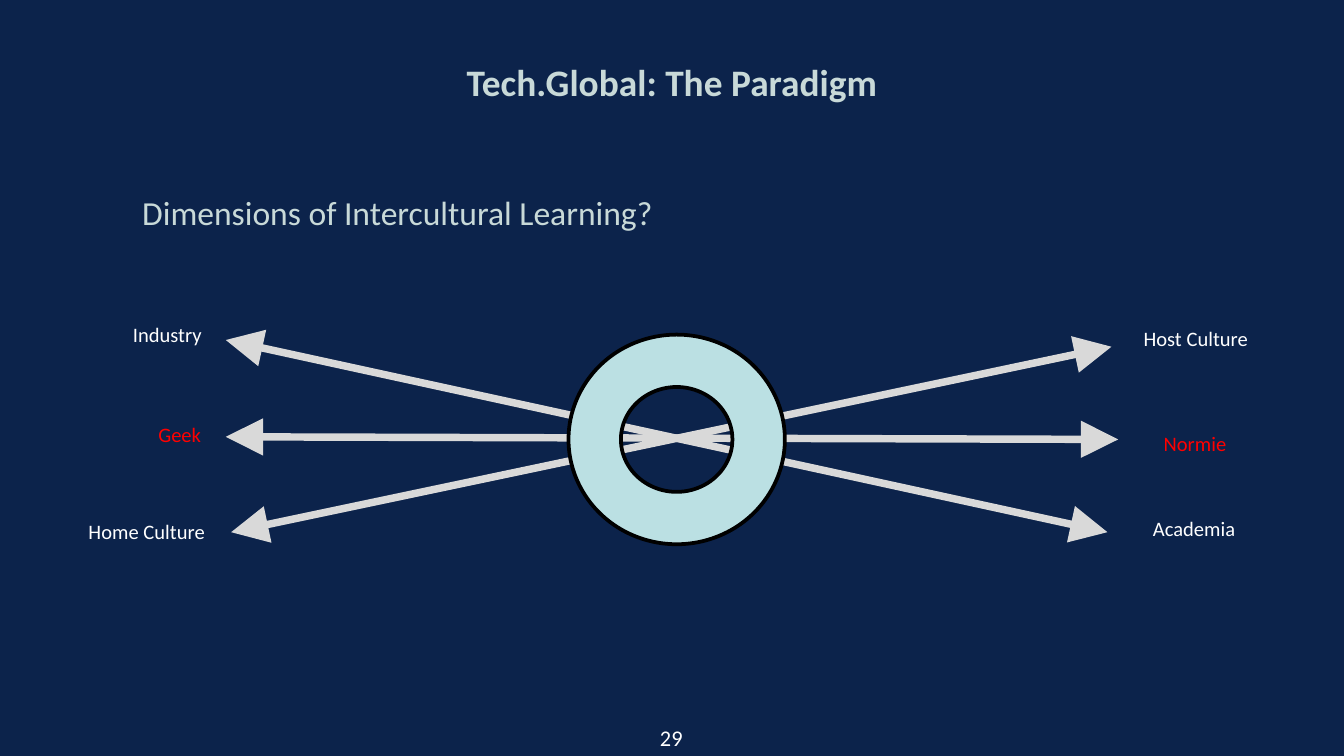
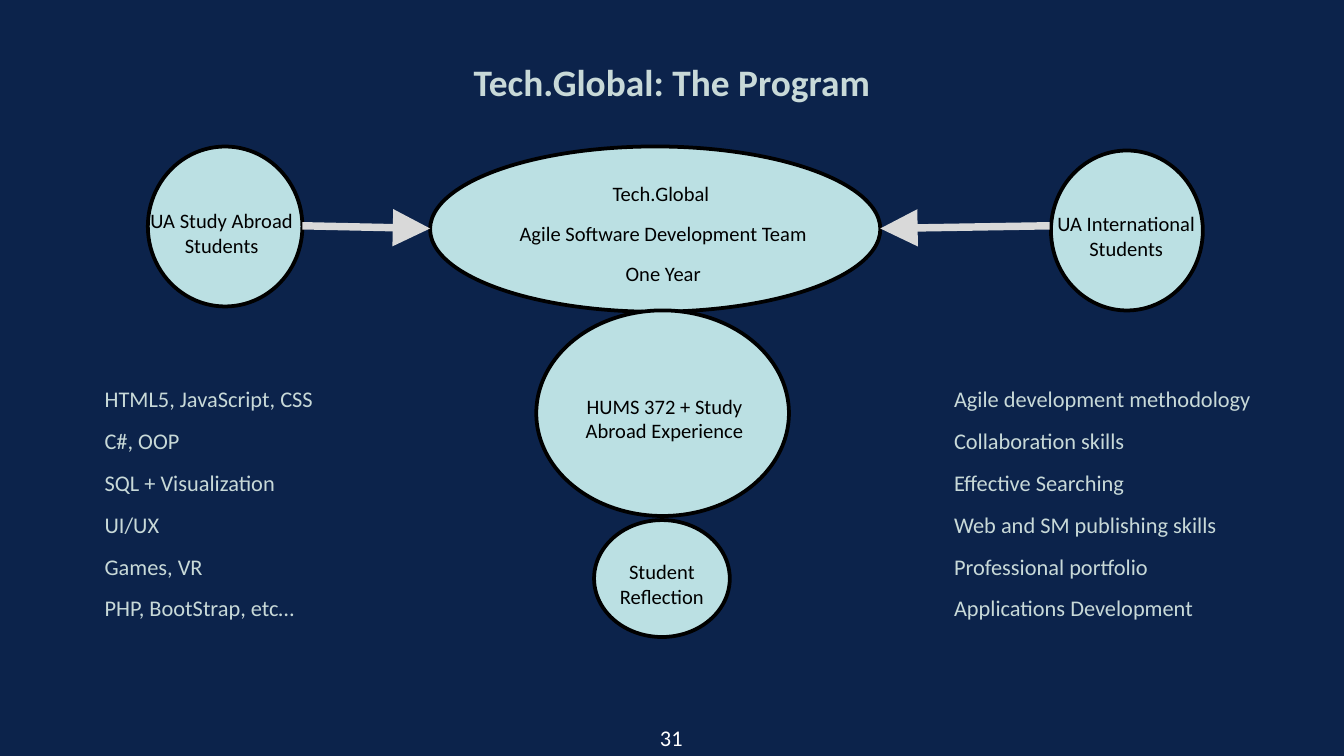
from dataclasses import dataclass

from lxml.etree import SubElement as Sub
from pptx import Presentation
from pptx.dml.color import RGBColor as Rgb
from pptx.enum.shapes import MSO_CONNECTOR as Link, MSO_SHAPE as Kind
from pptx.enum.text import MSO_ANCHOR as Anchor, PP_ALIGN as Align
from pptx.oxml.ns import qn
from pptx.util import Inches, Pt


@dataclass(frozen=True)
class Theme:
    """Colours, font and type sizes shared by the slides."""
    back: str = "0C234B"
    pale: str = "C8D9D8"
    white: str = "FFFFFF"
    black: str = "000000"
    red: str = "FF0000"
    fill: str = "BBE0E3"
    grey: str = "D9D9D9"
    font: str = "Calibri"
    title: int = 20
    lead: int = 18
    list: int = 12
    label: int = 11
    gap: int = 8
    edge: int = 2
    arrow: int = 4


LOOK = Theme()


def rgb(code):
    """Turn a hex code into a colour."""
    return Rgb.from_string(code)


def text(slide, words, left, top, width, height, size=LOOK.label,
         tone=LOOK.white, bold=False, align=Align.LEFT,
         anchor=Anchor.TOP, inset=None, wrap=True):
    """Add a text box with one paragraph for each line of words."""
    box = slide.shapes.add_textbox(*map(Inches, (left, top, width, height)))
    frame = box.text_frame
    frame.word_wrap = wrap
    frame.vertical_anchor = anchor
    if inset is not None:
        frame.margin_left = frame.margin_right = Inches(inset)
        frame.margin_top = frame.margin_bottom = Inches(inset)
    frame.text = words
    for spot, para in enumerate(frame.paragraphs):
        para.alignment = align
        if spot:
            para.space_before = Pt(LOOK.gap)
        font = para.font
        font.name = LOOK.font
        font.size = Pt(size)
        font.bold = bold
        font.color.rgb = rgb(tone)


def ring(slide, kind, left, top, width, height):
    """Add a pale round shape with a black edge."""
    shape = slide.shapes.add_shape(
        kind, *map(Inches, (left, top, width, height)))
    shape.shadow.inherit = False
    shape.fill.solid()
    shape.fill.fore_color.rgb = rgb(LOOK.fill)
    shape.line.color.rgb = rgb(LOOK.black)
    shape.line.width = Pt(LOOK.edge)


def arrow(slide, start, end, both=False):
    """Add a grey arrow, pointed at its end or at both ends."""
    line = slide.shapes.add_connector(
        Link.STRAIGHT, *map(Inches, (*start, *end)))
    line.line.color.rgb = rgb(LOOK.grey)
    line.line.width = Pt(LOOK.arrow)
    props = line.line._get_or_add_ln()
    for tag in ("a:headEnd", "a:tailEnd") if both else ("a:tailEnd",):
        Sub(props, qn(tag), type="triangle", w="lg", len="lg")
    Sub(line._element.spPr, qn("a:effectLst"))


def page(deck, title, number):
    """Add a slide with its title and page number."""
    slide = deck.slides.add_slide(deck.slide_layouts[6])
    text(slide, title, 0.75, 0, 8.5, 1.21, size=LOOK.title, tone=LOOK.pale,
         bold=True, align=Align.CENTER, anchor=Anchor.MIDDLE, inset=0.04)
    text(slide, str(number), 4.72, 5.34, 0.55, 0.29, size=LOOK.list,
         align=Align.CENTER, anchor=Anchor.MIDDLE, wrap=False)
    return slide


def model(deck):
    """Build the slide of opposed learning dimensions."""
    slide = page(deck, "Tech.Global: The Paradigm", 29)
    text(slide, "Dimensions of Intercultural Learning?", 0.96, 1.38, 7.89,
         0.39, size=LOOK.lead, tone=LOOK.pale)
    for start, end in (((1.68, 3.25), (8.32, 3.27)),
                       ((1.68, 2.53), (8.24, 3.96)),
                       ((1.72, 3.96), (8.27, 2.58))):
        arrow(slide, start, end, both=True)
    for words, left, top, width, tone in (
            ("Industry", 0.89, 2.35, 0.75, LOOK.white),
            ("Geek", 1.08, 3.09, 1, LOOK.red),
            ("Home Culture", 0.56, 3.81, 1.08, LOOK.white),
            ("Host Culture", 8.41, 2.38, 1.19, LOOK.white),
            ("Normie", 8.56, 3.16, 1.04, LOOK.red),
            ("Academia", 8.48, 3.79, 0.84, LOOK.white)):
        text(slide, words, left, top, width, 0.4, tone=tone)
    ring(slide, Kind.DONUT, 4.23, 2.49, 1.61, 1.56)


def program(deck):
    """Build the slide of teams, stages and skills."""
    slide = page(deck, "Tech.Global: The Program", 31)
    for spot, words, place in (
            ((1.1, 1.09, 1.15, 1.19), "UA Study Abroad Students",
             (0.9, 1.5, 1.5, 0.4)),
            ((7.82, 1.12, 1.13, 1.19), "UA International Students",
             (7.63, 1.52, 1.5, 0.4)),
            ((3.2, 1.09, 3.35, 1.23),
             "Tech.Global \nAgile Software Development Team\nOne Year",
             (3.48, 1.3, 2.91, 0.98)),
            ((3.99, 2.31, 1.88, 1.53), "HUMS 372 + Study Abroad Experience",
             (4.08, 2.88, 1.73, 0.39)),
            ((4.42, 3.87, 1.01, 0.87), "Student Reflection",
             (4.42, 4.11, 1.01, 0.4))):
        ring(slide, Kind.OVAL, *spot)
        text(slide, words, *place, tone=LOOK.black, align=Align.CENTER)
    arrow(slide, (2.25, 1.68), (3.2, 1.7))
    arrow(slide, (7.81, 1.68), (6.55, 1.7))
    tools = ("HTML5, JavaScript, CSS", "C#, OOP", "SQL + Visualization",
             "UI/UX", "Games, VR", "PHP, BootStrap, etc…")
    skills = ("Agile development methodology", "Collaboration skills",
              "Effective Searching", "Web and SM publishing skills",
              "Professional portfolio", "Applications Development")
    for left, items in ((0.68, tools), (7, skills)):
        text(slide, "\n".join(items), left, 2.82, 2.71, 2.06,
             size=LOOK.list, tone=LOOK.pale)


def main():
    """Build and save the deck."""
    deck = Presentation()
    deck.slide_width, deck.slide_height = Inches(10), Inches(10 * 9 / 16)
    fill = deck.slide_master.background.fill
    fill.solid()
    fill.fore_color.rgb = rgb(LOOK.back)
    model(deck)
    program(deck)
    deck.save("out.pptx")


if __name__ == "__main__":
    main()
